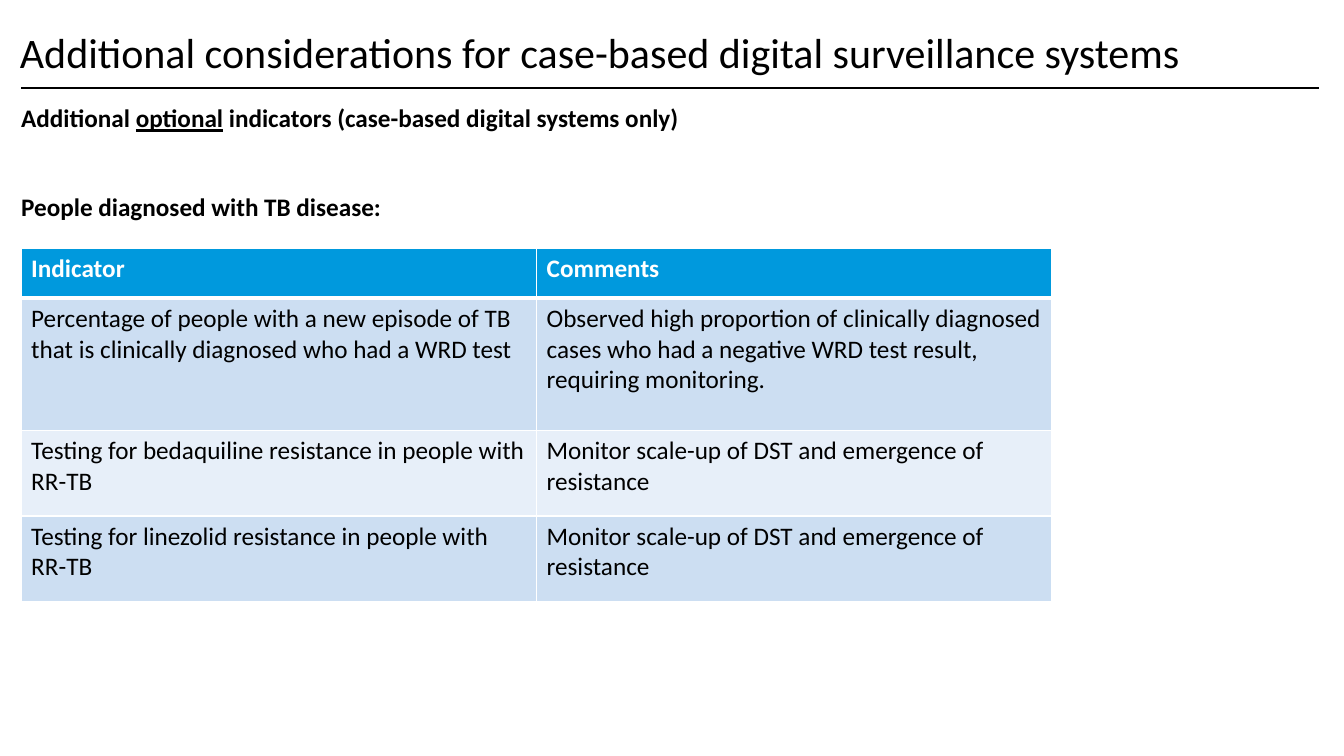
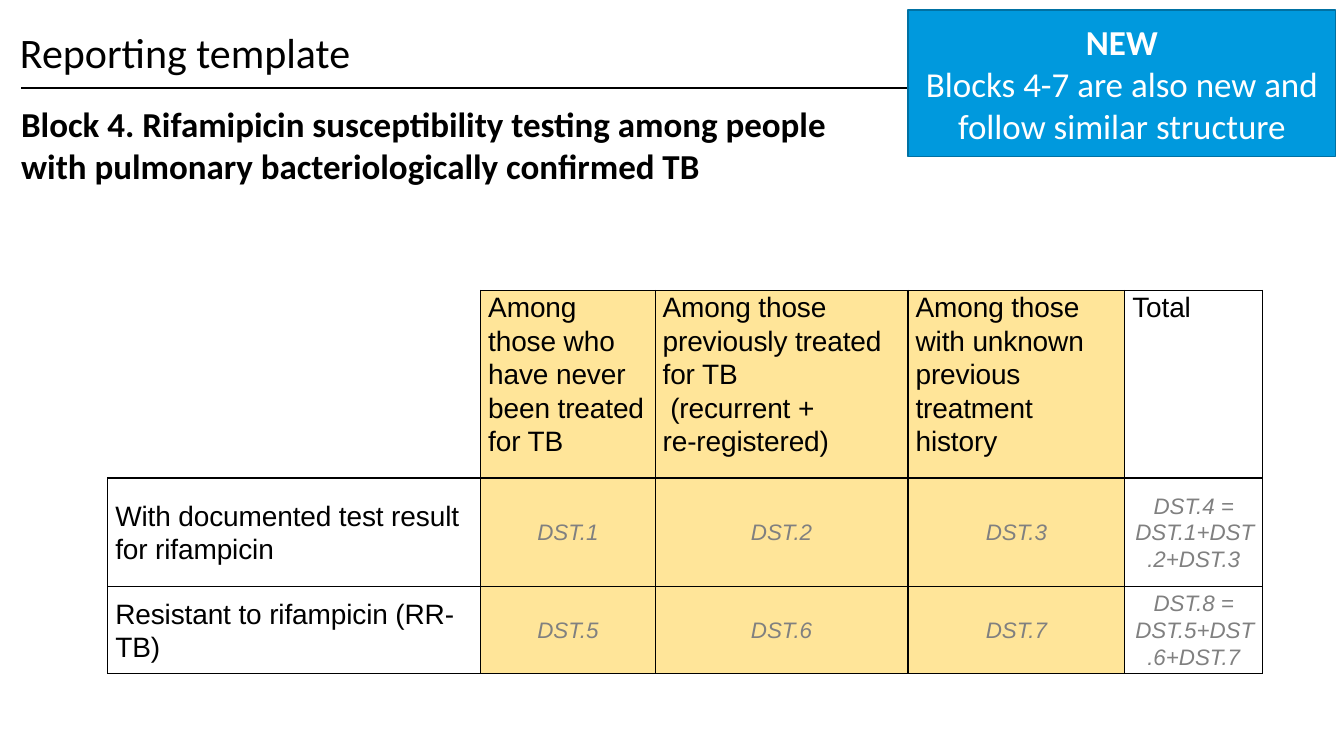
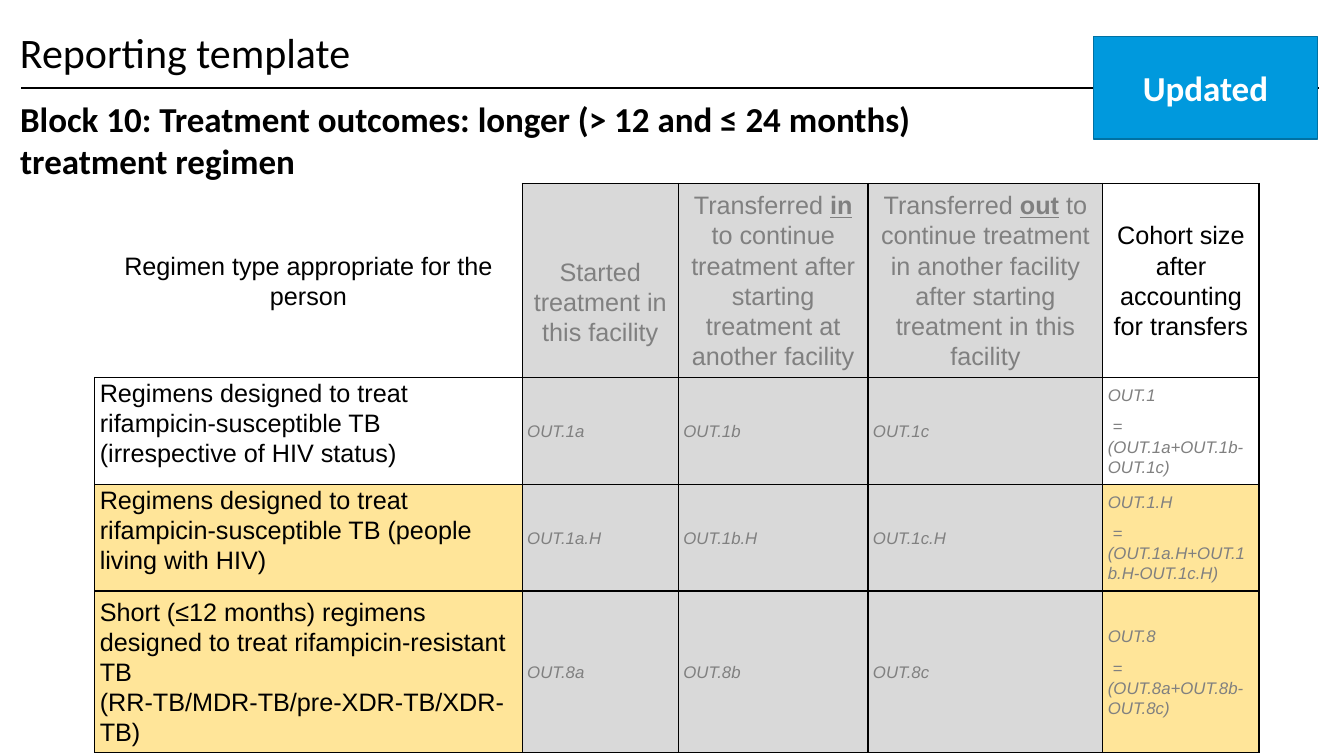
from dataclasses import dataclass, replace

from lxml.etree import SubElement
from pptx import Presentation
from pptx.dml.color import RGBColor
from pptx.enum.shapes import MSO_CONNECTOR as Conn, MSO_SHAPE as Shape
from pptx.enum.text import MSO_ANCHOR as Anchor, PP_ALIGN as Align
from pptx.oxml.ns import qn
from pptx.util import Pt

BLACK, WHITE, GREY = "000000", "FFFFFF", "808080"
BLUE, EDGE = "0099DD", "0071A3"
AMBER, SILVER = "FFE599", "D9D9D9"
TINTS = ["CCDEF2", "E7EFF9"]


@dataclass(frozen=True)
class Type:
    """Look of one block of text."""
    size: float
    color: str = BLACK
    font: str = "Calibri"
    bold: bool = False
    ital: bool = False
    align: int = Align.LEFT
    before: float = 0
    after: float = 0
    line: float = 1.0
    track: int = 0


@dataclass(frozen=True)
class Cell:
    """One table cell; top is extra room above its text."""
    paras: list
    type: Type
    fill: str = None
    mid: bool = True
    top: float = 0


def rgb(code):
    return RGBColor.from_string(code)


def border(cell, side, color, width):
    props = cell._tc.get_or_add_tcPr()
    edge = SubElement(props, qn("a:ln" + side), w=str(int(Pt(width))))
    paint = SubElement(edge, qn("a:solidFill"))
    SubElement(paint, qn("a:srgbClr"), val=color)


class Deck:
    TITLE = Type(30, line=0.9)
    HEAD = Type(25, bold=True, before=10)
    BADGE = Type(25, WHITE, align=Align.CENTER)

    def __init__(self):
        self.prs = Presentation()
        self.prs.slide_width, self.prs.slide_height = Pt(960), Pt(540)
        self.slide = None

    def page(self, title):
        """Start a slide with its title and the rule below it."""
        self.slide = self.prs.slides.add_slide(self.prs.slide_layouts[6])
        self.rule(15.1, 62.6, 942.5)
        box = self.text(7.2, 8.6, 943.2, 61.2, [title], self.TITLE,
                        (7.2, 3.6))
        box.text_frame.vertical_anchor = Anchor.MIDDLE

    def rule(self, left, top, right):
        line = self.slide.shapes.add_connector(
            Conn.STRAIGHT, Pt(left), Pt(top), Pt(right), Pt(top))
        line.line.color.rgb = rgb(BLACK)
        line.line.width = Pt(1.5)
        SubElement(line._element.spPr, qn("a:effectLst"))

    def put(self, frame, paras, look):
        """Fill a frame; a run is a string or (string, marks b and u)."""
        frame.word_wrap = True
        for i, runs in enumerate(paras):
            para = frame.paragraphs[0] if i == 0 else frame.add_paragraph()
            para.alignment = look.align
            para.line_spacing = look.line
            para.space_before = Pt(look.before)
            para.space_after = Pt(look.after)
            for run in [runs] if isinstance(runs, str) else runs:
                words, marks = (run, "") if isinstance(run, str) else run
                for j, part in enumerate(words.split("\n")):
                    if j:
                        para.add_line_break()
                    self.run(para, part, marks, look)

    def run(self, para, words, marks, look):
        run = para.add_run()
        run.text = words
        font = run.font
        font.name, font.size = look.font, Pt(look.size)
        font.color.rgb = rgb(look.color)
        font.bold = look.bold or "b" in marks
        font.italic = look.ital
        font.underline = "u" in marks
        if look.track:
            run._r.get_or_add_rPr().set("spc", str(look.track))

    def text(self, left, top, width, height, paras, look, pad=(0, 0)):
        box = self.slide.shapes.add_textbox(
            Pt(left), Pt(top), Pt(width), Pt(height))
        frame = box.text_frame
        frame.margin_left = frame.margin_right = Pt(pad[0])
        frame.margin_top = frame.margin_bottom = Pt(pad[1])
        self.put(frame, paras, look)
        return box

    def badge(self, left, top, width, height, paras):
        box = self.slide.shapes.add_shape(
            Shape.RECTANGLE, Pt(left), Pt(top), Pt(width), Pt(height))
        box.shadow.inherit = False
        box.fill.solid()
        box.fill.fore_color.rgb = rgb(BLUE)
        box.line.color.rgb = rgb(EDGE)
        box.line.width = Pt(1)
        box.text_frame.vertical_anchor = Anchor.MIDDLE
        self.put(box.text_frame, paras, self.BADGE)

    def table(self, left, top, cols, rows, cells, pad, edge=BLACK, head=1,
              corner=False):
        """Draw a table; head is the line below row 0, corner opens cell 0."""
        grid = self.slide.shapes.add_table(
            len(rows), len(cols), Pt(left), Pt(top),
            Pt(sum(cols)), Pt(sum(rows))).table
        grid.horz_banding = False
        for col, width in zip(grid.columns, cols):
            col.width = Pt(width)
        for row, height in zip(grid.rows, rows):
            row.height = Pt(height)
        for r, line in enumerate(cells):
            for c, item in enumerate(line):
                cell = grid.cell(r, c)
                for side in "RB" if corner and r == c == 0 else "LRTB":
                    thick = (r, side) in [(0, "B"), (1, "T")]
                    border(cell, side, edge, head if thick else 1)
                self.fill(cell, item, pad)

    def fill(self, cell, item, pad):
        if item and item.fill:
            cell.fill.solid()
            cell.fill.fore_color.rgb = rgb(item.fill)
        else:
            cell.fill.background()
        if not item:
            return
        cell.margin_left = cell.margin_right = Pt(pad[0])
        cell.margin_top, cell.margin_bottom = Pt(pad[1] + item.top), Pt(pad[1])
        cell.vertical_anchor = Anchor.MIDDLE if item.mid else Anchor.TOP
        self.put(cell.text_frame, item.paras, item.type)


def extras(deck):
    deck.page("Additional considerations for case-based digital "
              "surveillance systems")
    deck.text(15.1, 73.4, 927.4, 430.6, [
        ["Additional ", ("optional", "u"),
         " indicators (case-based digital systems only)"],
        "People diagnosed with TB disease:",
    ], Type(18, bold=True, before=42))
    scale = "Monitor scale-up of DST and emergence of resistance"
    test = "Testing for {} resistance in people with RR-TB"
    body = [
        ("Percentage of people with a new episode of TB that is clinically "
         "diagnosed who had a WRD test",
         "Observed high proportion of clinically diagnosed cases who had a "
         "negative WRD test result, requiring monitoring."),
        (test.format("bedaquiline"), scale),
        (test.format("linezolid"), scale),
    ]
    head = Type(18, WHITE, bold=True)
    cells = [[Cell([t], head, BLUE, False) for t in ("Indicator", "Comments")]]
    cells += [[Cell([t], Type(18), TINTS[i % 2], False) for t in pair]
              for i, pair in enumerate(body)]
    deck.table(15.1, 177.8, [368.2] * 2, [35.3, 94.3, 61.2, 61.2], cells,
               (7.2, 3.6), WHITE, 3)


def block4(deck):
    deck.page("Reporting template")
    deck.text(15.1, 73.4, 615.6, 430.6, [
        "Block 4. Rifamipicin susceptibility testing among people with "
        "pulmonary bacteriologically confirmed TB"], deck.HEAD)
    label = Type(20, font="Arial", before=4.5, after=2.7, line=1.07, track=-10)
    code = Type(16, GREY, "Arial", ital=True, align=Align.CENTER, after=6,
                line=1.07)
    heads = [
        "Among those who have never been treated for TB",
        "Among those previously treated for TB\n (recurrent + \n"
        "re-registered)",
        "Among those with unknown previous treatment history",
    ]
    cells = [[None] + [Cell([t], label, AMBER, False) for t in heads]
             + [Cell(["Total"], label, mid=False)]]
    names = ["With documented test result for rifampicin",
             "Resistant to rifampicin (RR-TB)"]
    for name, first in zip(names, (1, 5)):
        codes = [f"DST.{first + i}" for i in range(3)]
        total = f"DST.{first + 3} = " + "+".join(codes)
        cells.append([Cell([name], label)]
                     + [Cell([t], code, AMBER) for t in codes]
                     + [Cell([total], code)])
    deck.table(77, 207.4, [266.4, 124.6, 180.7, 154.8, 98.6],
               [134, 77.8, 56.3], cells, (5.4, 0), corner=True)
    deck.badge(648.7, 7.2, 305.3, 104.4, [
        [("NEW", "b")], "Blocks 4-7 are also new and follow similar structure"])


def block10(deck):
    deck.page("Reporting template")
    deck.text(14.4, 69.8, 655.2, 430.6, [
        "Block 10: Treatment outcomes: longer (> 12 and ≤ 24 months) "
        "treatment regimen"], deck.HEAD)
    label = Type(18, font="Arial", after=8, line=1.07)
    head = replace(label, align=Align.CENTER)
    pale = replace(head, color=GREY)
    code = replace(label, size=12, color=GREY, ital=True)
    cells = [[
        Cell(["Regimen type appropriate for the person"], head),
        Cell(["Started treatment in this facility"], pale, SILVER, top=30),
        Cell([["Transferred ", ("in", "bu"),
               " to continue treatment after starting treatment at another "
               "facility"]], pale, SILVER),
        Cell([["Transferred ", ("out", "bu"),
               " to continue treatment in another facility after starting "
               "treatment in this facility"]], pale, SILVER),
        Cell(["Cohort size after accounting for transfers"], head),
    ]]
    treat = "Regimens designed to treat rifampicin-susceptible TB "
    body = [
        (treat + "(irrespective of HIV status)", "OUT.1", "", None, False),
        (treat + "(people living with HIV)", "OUT.1", ".H", AMBER, False),
        ("Short (≤12 months) regimens designed to treat rifampicin-resistant "
         "TB (RR-TB/MDR-TB/pre-XDR-TB/XDR-TB)", "OUT.8", "", AMBER, True),
    ]
    for name, stem, tail, tint, mid in body:
        a, b, c = codes = [stem + part + tail for part in "abc"]
        total = [stem + tail, f" = ({a}+{b}-{c})"]
        cells.append([Cell([name], label, tint, mid)]
                     + [Cell([t], code, SILVER) for t in codes]
                     + [Cell(total, code, tint)])
    deck.table(67.7, 131, [305.3, 111.6, 135.4, 167.8, 111.6],
               [129, 76.3, 76.3, 107], cells, (3.6, 0), corner=True)
    deck.badge(781.2, 25.9, 159.8, 73.4, [[("Updated", "b")]])


def main():
    deck = Deck()
    for build in (extras, block4, block10):
        build(deck)
    deck.prs.save("out.pptx")


if __name__ == "__main__":
    main()
